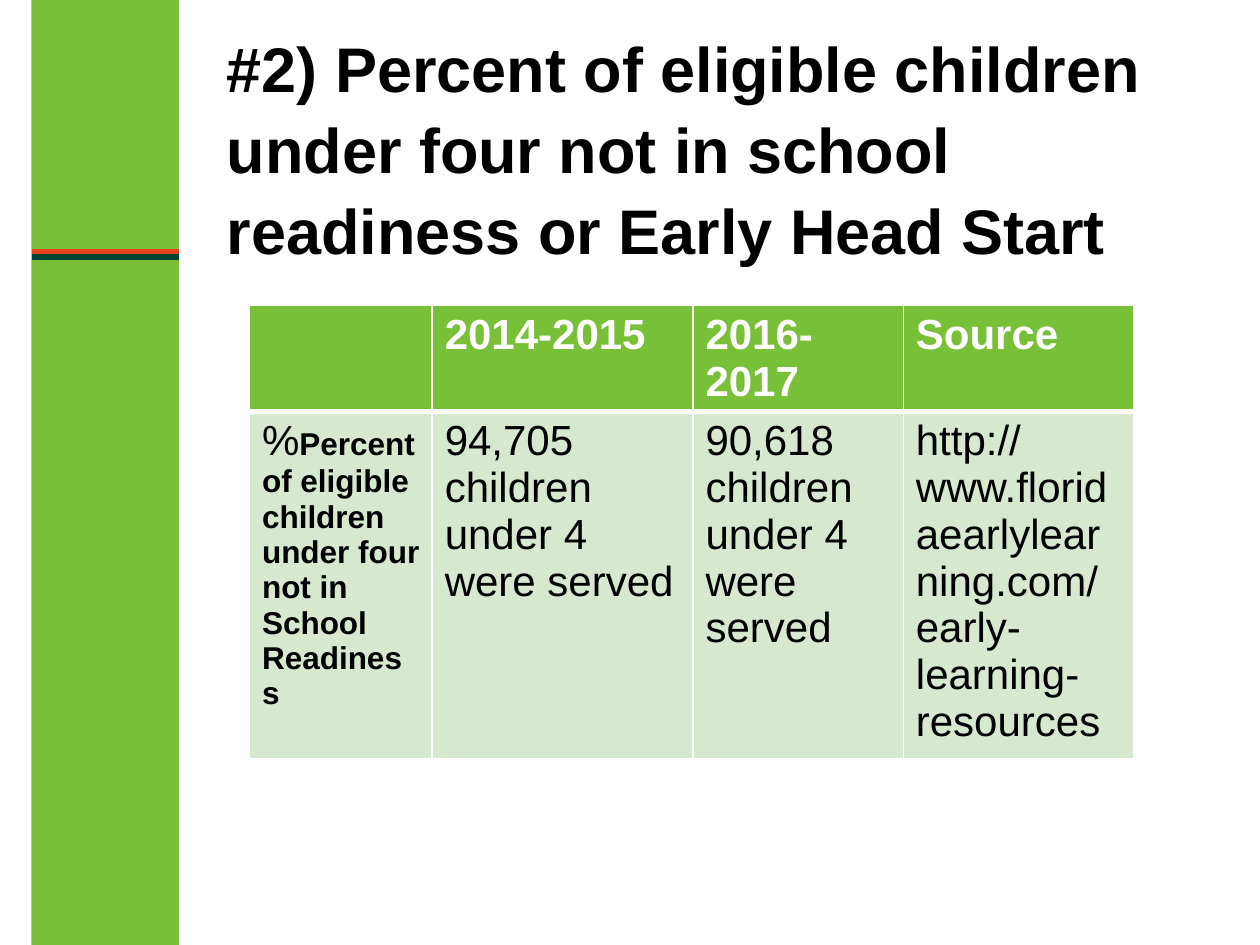
from dataclasses import dataclass

import lxml.etree
import pptx
import pptx.dml.color
import pptx.enum.shapes
import pptx.enum.text
import pptx.oxml.ns
import pptx.util


@dataclass(frozen=True)
class Theme:
    font: str = "Arial"
    bar: str = "78BF37"
    header: str = "78C037"
    body: str = "D6E8CE"
    light: str = "FFFFFF"
    dark: str = "000000"
    title_size: int = 36
    cell_size: int = 24
    label_size: int = 18


@dataclass(frozen=True)
class Stripe:
    top: float
    color: str
    weight: float = 3


@dataclass(frozen=True)
class Piece:
    text: str
    size: int
    bold: bool
    color: str


@dataclass(frozen=True)
class RowStyle:
    height: float
    fill: str
    borders: dict[str, float]


THEME = Theme()
WIDTH, HEIGHT = 10, 7.5
BAR_LEFT, BAR_WIDTH = 0.25, 1.17
STRIPES = [Stripe(2, "EA421F"), Stripe(2.04, "004531")]
COLUMN_WIDTHS = [1.45, 2.07, 1.67, 1.83]
ROW_STYLES = [
    RowStyle(0.41, THEME.header, {"L": 1, "R": 1, "T": 1, "B": 3}),
    RowStyle(2.76, THEME.body, {"L": 1, "R": 1, "T": 3, "B": 1}),
]


def heading(text: str) -> list[Piece]:
    return [Piece(text, THEME.cell_size, True, THEME.light)]


def entry(text: str) -> list[Piece]:
    return [Piece(text, THEME.cell_size, False, THEME.dark)]


ROWS = [
    [[], heading("2014-2015"), heading("2016-2017"), heading("Source")],
    [
        entry("%") + [Piece("Percent of eligible children under four not in School Readiness",
                            THEME.label_size, True, THEME.dark)],
        entry("94,705 children under 4 were served"),
        entry("90,618 children under 4 were served"),
        entry("http://www.floridaearlylearning.com/early-learning-resources"),
    ],
]


def inches(*lengths: float) -> list[int]:
    return [pptx.util.Inches(length) for length in lengths]


def rgb(color: str) -> pptx.dml.color.RGBColor:
    return pptx.dml.color.RGBColor.from_string(color)


def apply_format(target, values: dict) -> None:
    for name, value in values.items():
        setattr(target, name, value)


def write_piece(paragraph, piece: Piece) -> None:
    run = paragraph.add_run()
    run.text = piece.text
    apply_format(run.font, {"name": THEME.font, "size": pptx.util.Pt(piece.size),
                            "bold": piece.bold})
    run.font.color.rgb = rgb(piece.color)


def draw_bar(slide) -> None:
    bar = slide.shapes.add_shape(pptx.enum.shapes.MSO_SHAPE.RECTANGLE,
                                 *inches(BAR_LEFT, 0, BAR_WIDTH, HEIGHT))
    bar.shadow.inherit = False
    bar.fill.solid()
    bar.fill.fore_color.rgb = rgb(THEME.bar)
    bar.line.fill.background()


def draw_stripe(slide, stripe: Stripe) -> None:
    line = slide.shapes.add_connector(
        pptx.enum.shapes.MSO_CONNECTOR.STRAIGHT,
        *inches(BAR_LEFT, stripe.top, BAR_LEFT + BAR_WIDTH, stripe.top))
    line.line.color.rgb = rgb(stripe.color)
    line.line.width = pptx.util.Pt(stripe.weight)
    lxml.etree.SubElement(line._element.spPr, pptx.oxml.ns.qn("a:effectLst"))


def draw_borders(cell, borders: dict[str, float]) -> None:
    properties = cell._tc.get_or_add_tcPr()
    for side, weight in borders.items():
        line = lxml.etree.SubElement(properties, pptx.oxml.ns.qn(f"a:ln{side}"),
                                     w=str(pptx.util.Pt(weight)))
        fill = lxml.etree.SubElement(line, pptx.oxml.ns.qn("a:solidFill"))
        lxml.etree.SubElement(fill, pptx.oxml.ns.qn("a:srgbClr"), val=THEME.light)


def draw_table(slide) -> None:
    row_heights = [style.height for style in ROW_STYLES]
    table = slide.shapes.add_table(
        len(ROWS), len(COLUMN_WIDTHS),
        *inches(1.98, 2.42, sum(COLUMN_WIDTHS), sum(row_heights))).table
    for column, width in zip(table.columns, inches(*COLUMN_WIDTHS)):
        column.width = width
    for row, height in zip(table.rows, inches(*row_heights)):
        row.height = height
    for row, style, contents in zip(table.rows, ROW_STYLES, ROWS):
        for cell, pieces in zip(row.cells, contents):
            draw_borders(cell, style.borders)
            cell.fill.solid()
            cell.fill.fore_color.rgb = rgb(style.fill)
            for piece in pieces:
                write_piece(cell.text_frame.paragraphs[0], piece)


def write_title(slide) -> None:
    title = slide.shapes.title
    apply_format(title, dict(zip(("left", "top", "width", "height"),
                                 inches(1.7, 0.83, 7.58, 1.25))))
    apply_format(title.text_frame, {
        "word_wrap": True,
        "auto_size": pptx.enum.text.MSO_AUTO_SIZE.NONE,
        "vertical_anchor": pptx.enum.text.MSO_ANCHOR.MIDDLE,
    })
    paragraph = title.text_frame.paragraphs[0]
    apply_format(paragraph, {"alignment": pptx.enum.text.PP_ALIGN.LEFT, "line_spacing": 1.07})
    write_piece(paragraph, Piece(
        "#2) Percent of eligible children under four not in school readiness or Early Head Start",
        THEME.title_size, True, THEME.dark))
    paragraph.add_line_break()
    paragraph.font.size = pptx.util.Pt(THEME.title_size)


def main() -> None:
    deck = pptx.Presentation()
    deck.slide_width, deck.slide_height = inches(WIDTH, HEIGHT)
    slide = deck.slides.add_slide(deck.slide_layouts[5])
    draw_bar(slide)
    for stripe in STRIPES:
        draw_stripe(slide, stripe)
    draw_table(slide)
    write_title(slide)
    deck.save("out.pptx")


if __name__ == "__main__":
    main()
